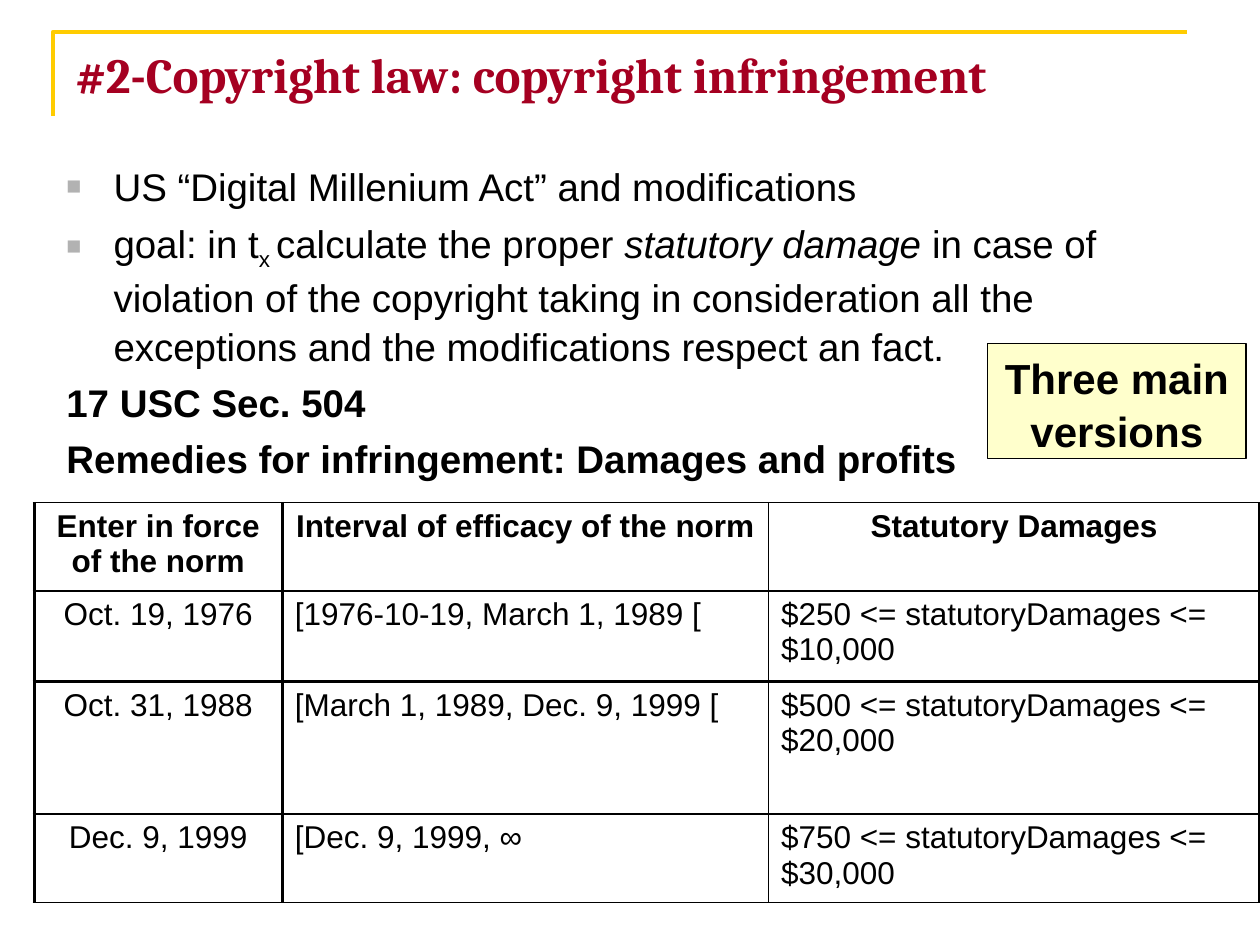
import pptx
import pptx.dml.color
import pptx.enum.shapes
import pptx.enum.text
import pptx.oxml
import pptx.oxml.ns
import pptx.util
from pptx.util import Cm

ALIGN = pptx.enum.text.PP_ALIGN
ANCHOR = pptx.enum.text.MSO_ANCHOR
AUTO_SIZE = pptx.enum.text.MSO_AUTO_SIZE
NAMESPACE = pptx.oxml.ns.nsdecls("a")

BODY = [
    (True, [("US “Digital Millenium Act” and modifications", {})]),
    (True, [
        ("goal: in t", {}),
        ("x ", {"baseline": -25}),
        ("calculate the proper ", {}),
        ("statutory damage", {"italic": True}),
        (" in case of violation of the copyright taking in consideration all the "
         "exceptions and the modifications respect an fact.", {}),
    ]),
    (False, [("17 USC Sec. 504", {"bold": True})]),
    (False, [("Remedies for infringement: Damages and profits", {"bold": True})]),
]
NORMS = [
    ("Enter in force of the norm", "Interval of efficacy of the norm", "Statutory Damages"),
    ("Oct. 19, 1976", "[1976-10-19, March 1, 1989 [", "$250 <= statutoryDamages <= $10,000"),
    ("Oct. 31, 1988", "[March 1, 1989, Dec. 9, 1999 [", "$500 <= statutoryDamages <= $20,000"),
    ("Dec. 9, 1999", "[Dec. 9, 1999, ∞", "$750 <= statutoryDamages <= $30,000"),
]
COLUMN_WIDTHS = (5, 9.8, 9.91)
ROW_HEIGHTS = (1.78, 1.83, 2.67, 1.78)
VERTICAL_RULES = (2, 2, 1, 2)
HORIZONTAL_RULES = (1, 1, 2, 1, 1)


def color(value):
    """Return the colour for a hex string."""
    return pptx.dml.color.RGBColor.from_string(value)


def add_text(para, text, size=18, font="Arial", fill="000000", bold=False, italic=False, baseline=0):
    """Add a formatted run to a paragraph."""
    span = para.add_run()
    span.text = text
    span.font.size = pptx.util.Pt(size)
    span.font.name = font
    span.font.color.rgb = color(fill)
    span.font.bold = bold
    span.font.italic = italic
    if baseline:
        span.font._element.set("baseline", str(baseline * 1000))


def set_hanging(para, bulleted):
    """Give a paragraph a hanging indent, with or without a square bullet."""
    properties = para._p.get_or_add_pPr()
    properties.set("marL", str(Cm(0.95)))
    properties.set("indent", str(Cm(-0.95)))
    marks = ['<a:buNone {}/>']
    if bulleted:
        marks = ['<a:buClr {}><a:srgbClr val="B2B2B2"/></a:buClr>',
                 '<a:buSzPct {} val="65000"/>',
                 '<a:buFont {} typeface="Arial"/>',
                 '<a:buChar {} char="■"/>']
    for mark in marks:
        properties.append(pptx.oxml.parse_xml(mark.format(NAMESPACE)))


def add_corner_rule(page):
    """Draw the yellow rule along the top left corner."""
    builder = page.shapes.build_freeform(Cm(1.07), Cm(2.34))
    builder.add_line_segments([(Cm(1.07), Cm(0.64)), (Cm(23.93), Cm(0.64))], close=False)
    rule = builder.convert_to_shape()
    rule.shadow.inherit = False
    rule.fill.background()
    rule.line.color.rgb = color("FFCC00")
    rule.line.width = pptx.util.Pt(2.25)


def set_title(page, text):
    """Place the title placeholder and fill it."""
    title = page.shapes.title
    title.left, title.top, title.width, title.height = Cm(1.27), Cm(0.76), Cm(22.86), Cm(3.18)
    frame = title.text_frame
    frame.auto_size = AUTO_SIZE.NONE
    frame.vertical_anchor = ANCHOR.TOP
    para = frame.paragraphs[0]
    para.alignment = ALIGN.LEFT
    add_text(para, text, size=28, font="Cambria", fill="A50021", bold=True)


def add_body(page, items):
    """Add the body text with its bulleted and plain paragraphs."""
    box = page.shapes.add_textbox(Cm(1.09), Cm(3.12), Cm(22.4), Cm(6.6))
    frame = box.text_frame
    frame.word_wrap = True
    for index, (bulleted, spans) in enumerate(items):
        para = frame.add_paragraph() if index else frame.paragraphs[0]
        para.line_spacing = 1.05
        para.space_before = pptx.util.Pt(4.4)
        set_hanging(para, bulleted)
        for text, style in spans:
            add_text(para, text, size=22, **style)


def set_borders(cell, **widths):
    """Draw black cell borders, widths in points keyed by side (L, R, T, B)."""
    properties = cell._tc.get_or_add_tcPr()
    for side, width in widths.items():
        properties.append(pptx.oxml.parse_xml(
            f'<a:ln{side} {NAMESPACE} w="{pptx.util.Pt(width)}"><a:solidFill>'
            f'<a:srgbClr val="000000"/></a:solidFill></a:ln{side}>'))


def add_norm_table(page, rows):
    """Add the table of norm versions."""
    frame = page.shapes.add_table(
        len(rows), len(COLUMN_WIDTHS), Cm(0.69), Cm(10.13),
        Cm(sum(COLUMN_WIDTHS)), Cm(sum(ROW_HEIGHTS)))
    table = frame.table
    table.first_row = table.horz_banding = False
    for column, width in zip(table.columns, COLUMN_WIDTHS):
        column.width = Cm(width)
    for r, (texts, height) in enumerate(zip(rows, ROW_HEIGHTS)):
        table.rows[r].height = Cm(height)
        for c, text in enumerate(texts):
            cell = table.cell(r, c)
            set_borders(cell, L=VERTICAL_RULES[c], R=VERTICAL_RULES[c + 1],
                        T=HORIZONTAL_RULES[r], B=HORIZONTAL_RULES[r + 1])
            cell.fill.background()
            para = cell.text_frame.paragraphs[0]
            para.alignment = ALIGN.CENTER if r == 0 or c == 0 else ALIGN.LEFT
            add_text(para, text, bold=r == 0)


def add_callout(page, text):
    """Add the pale yellow note box."""
    box = page.shapes.add_shape(
        pptx.enum.shapes.MSO_SHAPE.RECTANGLE, Cm(19.91), Cm(6.93), Cm(5.21), Cm(2.31))
    box.shadow.inherit = False
    box.fill.solid()
    box.fill.fore_color.rgb = color("FFFFCC")
    box.line.color.rgb = color("000000")
    box.line.width = pptx.util.Pt(0.75)
    frame = box.text_frame
    frame.word_wrap = True
    frame.auto_size = AUTO_SIZE.SHAPE_TO_FIT_TEXT
    frame.vertical_anchor = ANCHOR.TOP
    para = frame.paragraphs[0]
    para.alignment = ALIGN.CENTER
    para.line_spacing = 1.05
    add_text(para, text, size=24, bold=True)


def main():
    """Build the slide and save the deck."""
    deck = pptx.Presentation()
    deck.slide_width, deck.slide_height = Cm(25.4), Cm(19.05)
    page = deck.slides.add_slide(deck.slide_layouts.get_by_name("Title Only"))
    add_corner_rule(page)
    set_title(page, "#2-Copyright law: copyright infringement")
    add_body(page, BODY)
    add_norm_table(page, NORMS)
    add_callout(page, "Three main versions")
    deck.save("out.pptx")


if __name__ == "__main__":
    main()
